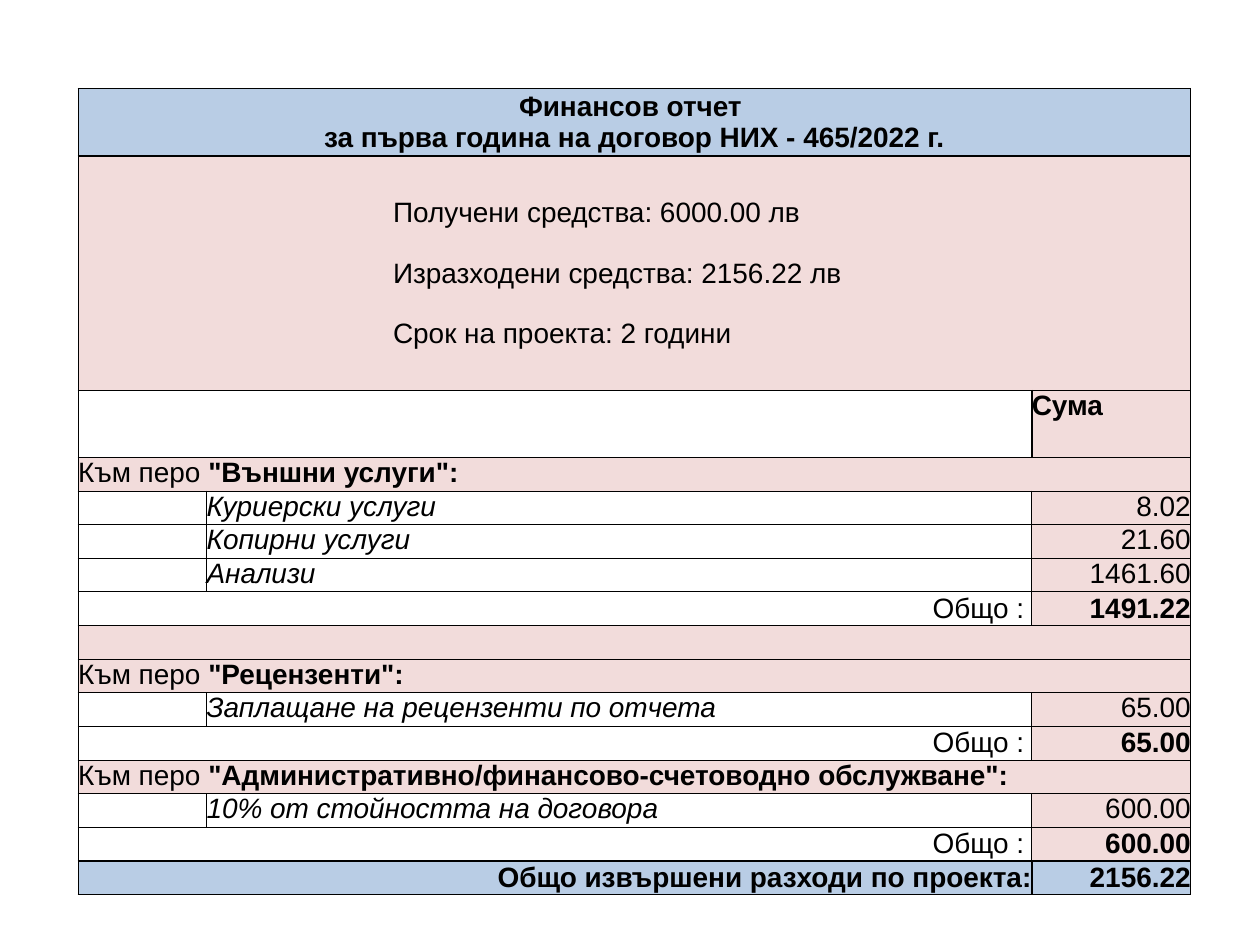
"""Builds a one-slide financial report table for the first year of a project."""
from lxml import etree
from pptx import Presentation
from pptx.dml.color import RGBColor
from pptx.enum.text import MSO_ANCHOR, PP_ALIGN
from pptx.oxml.ns import qn
from pptx.util import Inches, Pt

LEFT, CENTER, RIGHT = PP_ALIGN.LEFT, PP_ALIGN.CENTER, PP_ALIGN.RIGHT
TOP, MIDDLE = MSO_ANCHOR.TOP, MSO_ANCHOR.MIDDLE
COLORS = {"blue": "B9CDE5", "pink": "F2DCDB", "black": "000000"}
COLUMNS = [1.02, 1.48, 5.07, 1.26]
ROWS = [0.54, 1.86, 0.53] + [0.267] * 13
HEAVY_EDGES = {1, 2, 3, 15}
HEAVY_ROWS = {2, 15}
SUMMARY_ROW = 1
TITLE = ["Финансов отчет ", "за първа година на договор НИХ - 465/2022 г."]
SUMMARY = ["Получени средства: 6000.00 лв",
           "Изразходени средства: 2156.22 лв",
           "Срок на проекта: 2 години"]
SECTIONS = [
    ("Външни услуги", [("Куриерски услуги", "8.02"), ("Копирни услуги", "21.60"),
                       ("Анализи", "1461.60")], "1491.22", True),
    ("Рецензенти", [("Заплащане на рецензенти по отчета", "65.00")], "65.00", False),
    ("Административно/финансово-счетоводно обслужване",
     [("10% от стойността на договора", "600.00")], "600.00", False),
]


def draw_borders(cell, widths):
    """Gives the cell a line on each side, or none where the width is 0."""
    properties = cell._tc.get_or_add_tcPr()
    for side, width in widths.items():
        line = etree.SubElement(properties, qn("a:ln" + side), w=str(Pt(width)))
        if width:
            fill = etree.SubElement(line, qn("a:solidFill"))
            etree.SubElement(fill, qn("a:srgbClr"), val=COLORS["black"])
        else:
            etree.SubElement(line, qn("a:noFill"))


def write(cell, paragraphs, align=LEFT, anchor=TOP, gap=0):
    """Writes paragraphs, each a list of (text, format) spans, into the cell."""
    cell.vertical_anchor = anchor
    for number, spans in enumerate(paragraphs):
        frame = cell.text_frame
        para = frame.add_paragraph() if number else frame.paragraphs[0]
        para.alignment = align
        if number and gap:
            para.space_before = Pt(gap)
        for text, style in spans:
            span = para.add_run()
            span.text = text
            values = {"name": "Arial", "size": Pt(16), "bold": False, "italic": False}
            for name, value in {**values, **style}.items():
                setattr(span.font, name, value)
            span.font.color.rgb = RGBColor.from_string(COLORS["black"])


deck = Presentation()
deck.slide_width, deck.slide_height = Inches(10), Inches(7.5)
page = deck.slides.add_slide(deck.slide_layouts[6])
table = page.shapes.add_table(
    len(ROWS), len(COLUMNS), Inches(0.62), Inches(0.7),
    Inches(sum(COLUMNS)), Inches(sum(ROWS))).table
table.first_row = table.horz_banding = False
for column, width in zip(table.columns, COLUMNS):
    column.width = Inches(width)
for row, height in zip(table.rows, ROWS):
    row.height = Inches(height)

bold, italic = {"bold": True}, {"italic": True}
fills = {(SUMMARY_ROW, column): "pink" for column in range(4)}
merges = [(0, 0, 3), (SUMMARY_ROW, 0, 1), (2, 0, 2)]

write(table.cell(0, 0), [[(line, bold)] for line in TITLE], CENTER, MIDDLE)
write(table.cell(SUMMARY_ROW, 2), [[(line, {})] for line in SUMMARY], LEFT, MIDDLE, gap=17)
write(table.cell(2, 3), [[("Сума", bold)]])
fills.update({(0, 0): "blue", (2, 3): "pink"})

index = 3
for heading, items, total, spacer in SECTIONS:
    write(table.cell(index, 0), [[("Към перо ", {}), (f'"{heading}":', bold)]])
    merges.append((index, 0, 3))
    fills[index, 0] = "pink"
    for name, amount in items:
        index += 1
        write(table.cell(index, 1), [[(name, italic)]])
        write(table.cell(index, 3), [[(amount, {})]], RIGHT)
        merges.append((index, 1, 2))
        fills[index, 3] = "pink"
    index += 1
    write(table.cell(index, 0), [[("Общо : ", {})]], RIGHT, MIDDLE)
    write(table.cell(index, 3), [[(total, bold)]], RIGHT, MIDDLE)
    merges.append((index, 0, 2))
    fills[index, 3] = "pink"
    index += 1
    if spacer:
        merges.append((index, 0, 3))
        fills[index, 0] = "pink"
        index += 1

write(table.cell(index, 0), [[("Общо извършени разходи по проекта:", bold)]], RIGHT, MIDDLE)
write(table.cell(index, 3), [[("2156.22", bold)]], RIGHT, MIDDLE)
merges.append((index, 0, 2))
fills.update({(index, 0): "blue", (index, 3): "blue"})

for row, first, last in merges:
    table.cell(row, first).merge(table.cell(row, last))

for row in range(len(ROWS)):
    for column in range(len(COLUMNS)):
        cell = table.cell(row, column)
        cell.margin_left = cell.margin_right = cell.margin_top = cell.margin_bottom = 0
        inner = 0 if row == SUMMARY_ROW else 0.5
        divider = 1 if row in HEAVY_ROWS else 0.5
        draw_borders(cell, {
            "L": 0.5 if column == 0 else divider if column == 3 and inner else inner,
            "R": 0.5 if column == 3 else divider if column == 2 and inner else inner,
            "T": 1 if row in HEAVY_EDGES else 0.5,
            "B": 1 if row + 1 in HEAVY_EDGES else 0.5,
        })
        if (row, column) in fills:
            cell.fill.solid()
            cell.fill.fore_color.rgb = RGBColor.from_string(COLORS[fills[row, column]])
        else:
            cell.fill.background()
        if not cell.text:
            para = cell.text_frame.paragraphs[0]
            etree.SubElement(para._p, qn("a:endParaRPr"), sz="1200")

deck.save("out.pptx")
